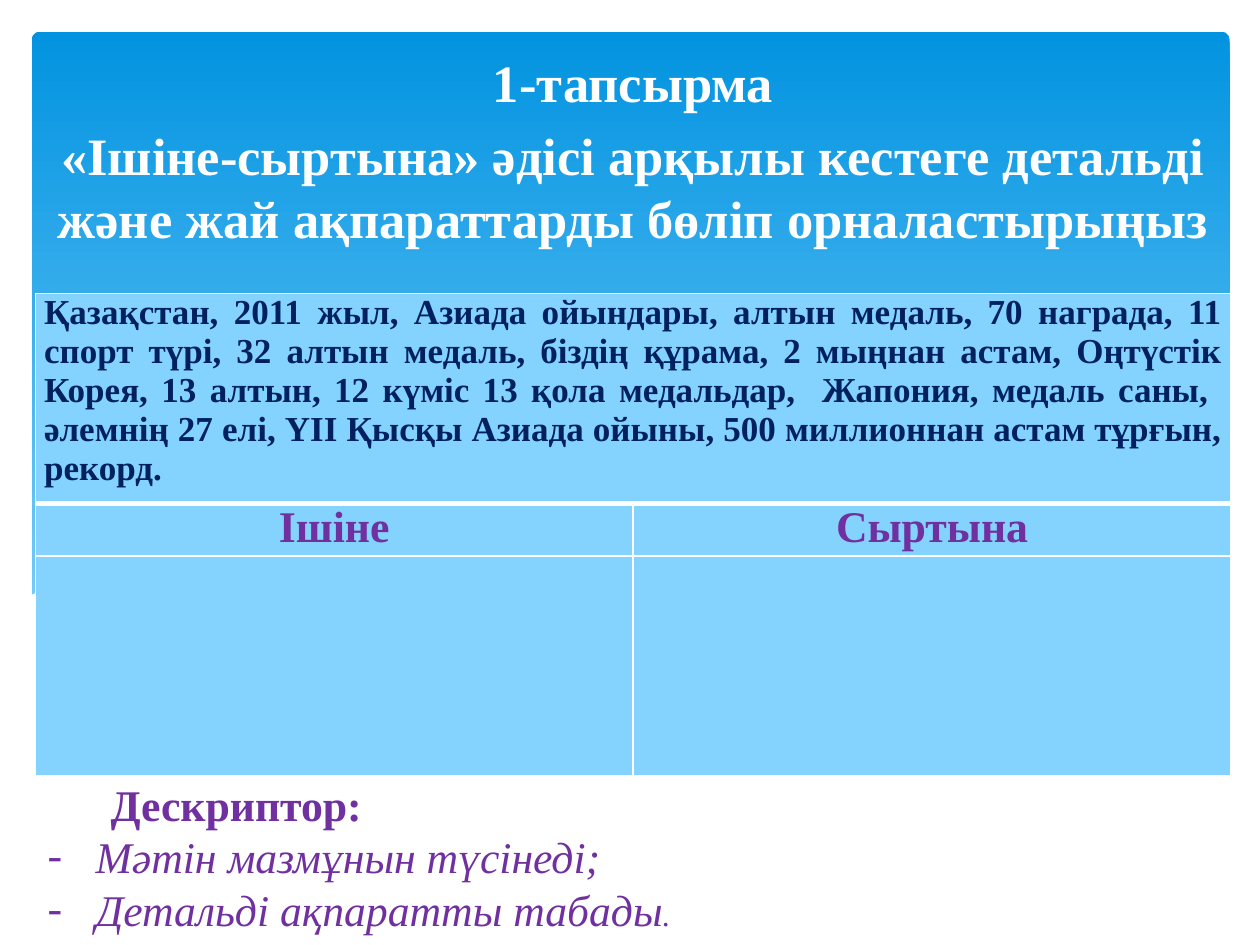
import pptx
import pptx.dml.color
import pptx.enum.shapes
import pptx.enum.text
import pptx.oxml
import pptx.oxml.ns
import pptx.util

Inches = pptx.util.Inches
Pt = pptx.util.Pt
ALIGN = pptx.enum.text.PP_ALIGN
ANCHOR = pptx.enum.text.MSO_ANCHOR

FONT = "Times New Roman"
COLORS = {
    "white": "FFFFFF",
    "deep": "0293E0",
    "sky": "83D3FE",
    "navy": "002060",
    "purple": "7030A0",
}

TITLE = [
    "1-тапсырма",
    "«Ішіне-сыртына» әдісі арқылы кестеге детальді және жай ақпараттарды бөліп орналастырыңыз",
]
FACTS = (
    "Қазақстан, 2011 жыл, Азиада ойындары, алтын медаль, 70 награда, 11 спорт түрі, "
    "32 алтын медаль, біздің құрама, 2 мыңнан астам, Оңтүстік Корея, 13 алтын, 12 күміс "
    "13 қола медальдар,  Жапония, медаль саны,  әлемнің 27 елі, ҮІІ Қысқы Азиада ойыны, "
    "500 миллионнан астам тұрғын, рекорд."
)
HEADINGS = ["Ішіне", "Сыртына"]
DESCRIPTOR = "Дескриптор:"
CRITERIA = [[("Мәтін мазмұнын түсінеді;", 25)], [("Детальді ақпаратты табады", 25), (".", 18)]]

LEFT, WIDTH = 0.28, 9.49
TABLE_TOP = 2.33
ROW_HEIGHTS = [1.54, 0.38, 1.74]
# Wave outline in hundredths of an inch
WAVE = [
    (977, 506), (940, 519), (899, 530), (850, 535), (793, 537), (726, 532),
    (648, 522), (555, 505), (447, 480), (365, 462), (292, 451), (230, 445),
    (177, 444), (132, 446), (85, 453), (46, 463), (23, 473),
    (23, 589), (977, 589),
]


def rgb(name):
    return pptx.dml.color.RGBColor.from_string(COLORS[name])


def write(paragraph, text, size=25, color="purple", bold=False, italic=False,
          align=ALIGN.JUSTIFY, before=0):
    paragraph.alignment = align
    paragraph.space_before = Pt(before)
    run = paragraph.add_run()
    run.text = text
    run.font.name, run.font.size = FONT, Pt(size)
    run.font.bold, run.font.italic = bold, italic
    run.font.color.rgb = rgb(color)


def indent(paragraph, margin, bullet=None):
    properties = paragraph._p.get_or_add_pPr()
    properties.set("marL", str(Inches(margin)))
    properties.set("indent", str(-Inches(margin) if bullet else 0))
    if bullet:
        font = pptx.oxml.parse_xml(
            f'<a:buFont {pptx.oxml.ns.nsdecls("a")} typeface="{FONT}"/>')
        mark = pptx.oxml.parse_xml(
            f'<a:buChar {pptx.oxml.ns.nsdecls("a")} char="{bullet}"/>')
        properties.extend([font, mark])


def style_cell(cell, bottom=1):
    for side, width in (("L", 1), ("R", 1), ("T", 1), ("B", bottom)):
        cell._tc.get_or_add_tcPr().append(pptx.oxml.parse_xml(
            f'<a:ln{side} {pptx.oxml.ns.nsdecls("a")} w="{Pt(width)}"><a:solidFill>'
            f'<a:srgbClr val="{COLORS["white"]}"/></a:solidFill></a:ln{side}>'))
    cell.fill.solid()
    cell.fill.fore_color.rgb = rgb("sky")
    cell.margin_left = cell.margin_right = Inches(0.07)
    cell.margin_top = cell.margin_bottom = 0


def add_text_frame(slide, left, top, width, height):
    frame = slide.shapes.add_textbox(*map(Inches, (left, top, width, height))).text_frame
    frame.word_wrap = True
    return frame


def add_background(slide):
    panel = slide.shapes.add_shape(
        pptx.enum.shapes.MSO_SHAPE.ROUNDED_RECTANGLE,
        *map(Inches, (0.25, 0.25, 9.51, 5.18)))
    panel.adjustments[0] = 0.013
    panel.fill.gradient()
    panel.fill.gradient_angle = 270
    for stop, color in zip(panel.fill.gradient_stops, ("deep", "sky")):
        stop.color.rgb = rgb(color)

    builder = slide.shapes.build_freeform(*WAVE[0], scale=Inches(0.01))
    builder.add_line_segments(WAVE[1:], close=True)
    wave = builder.convert_to_shape()
    wave.fill.solid()
    wave.fill.fore_color.rgb = rgb("white")
    for shape in (panel, wave):
        shape.line.fill.background()
        shape.shadow.inherit = False


def add_title(slide):
    frame = add_text_frame(slide, LEFT, 0.36, WIDTH, TABLE_TOP - 0.36)
    frame.vertical_anchor = ANCHOR.BOTTOM
    frame.margin_bottom = Inches(0.35)
    for index, line in enumerate(TITLE):
        paragraph = frame.add_paragraph() if index else frame.paragraphs[0]
        write(paragraph, line, size=30, color="white", bold=True, align=ALIGN.CENTER,
              before=6 if index else 0)


def add_sorting_table(slide):
    table = slide.shapes.add_table(
        len(ROW_HEIGHTS), len(HEADINGS), Inches(LEFT), Inches(TABLE_TOP),
        Inches(WIDTH), Inches(sum(ROW_HEIGHTS))).table
    table.first_row = table.horz_banding = False
    for row, height in zip(table.rows, ROW_HEIGHTS):
        row.height = Inches(height)
    for index, row in enumerate(table.rows):
        for cell in row.cells:
            style_cell(cell, bottom=1 if index else 3)
    facts = table.cell(0, 0)
    facts.merge(table.cell(0, len(HEADINGS) - 1))
    write(facts.text_frame.paragraphs[0], FACTS, size=20, color="navy", bold=True)
    for column, heading in enumerate(HEADINGS):
        write(table.cell(1, column).text_frame.paragraphs[0], heading, bold=True,
              align=ALIGN.CENTER)


def add_descriptor(slide):
    frame = add_text_frame(slide, LEFT, 6.12, 8.82, 1.36)
    heading = frame.paragraphs[0]
    indent(heading, 0.5)
    write(heading, DESCRIPTOR, bold=True)
    for criterion in CRITERIA:
        paragraph = frame.add_paragraph()
        indent(paragraph, 0.38, bullet="-")
        for text, size in criterion:
            write(paragraph, text, size=size, italic=True)


def main():
    presentation = pptx.Presentation()
    presentation.slide_width, presentation.slide_height = Inches(10), Inches(7.5)
    slide = presentation.slides.add_slide(presentation.slide_layouts[6])
    add_background(slide)
    add_title(slide)
    add_sorting_table(slide)
    add_descriptor(slide)
    presentation.save("out.pptx")


if __name__ == "__main__":
    main()
